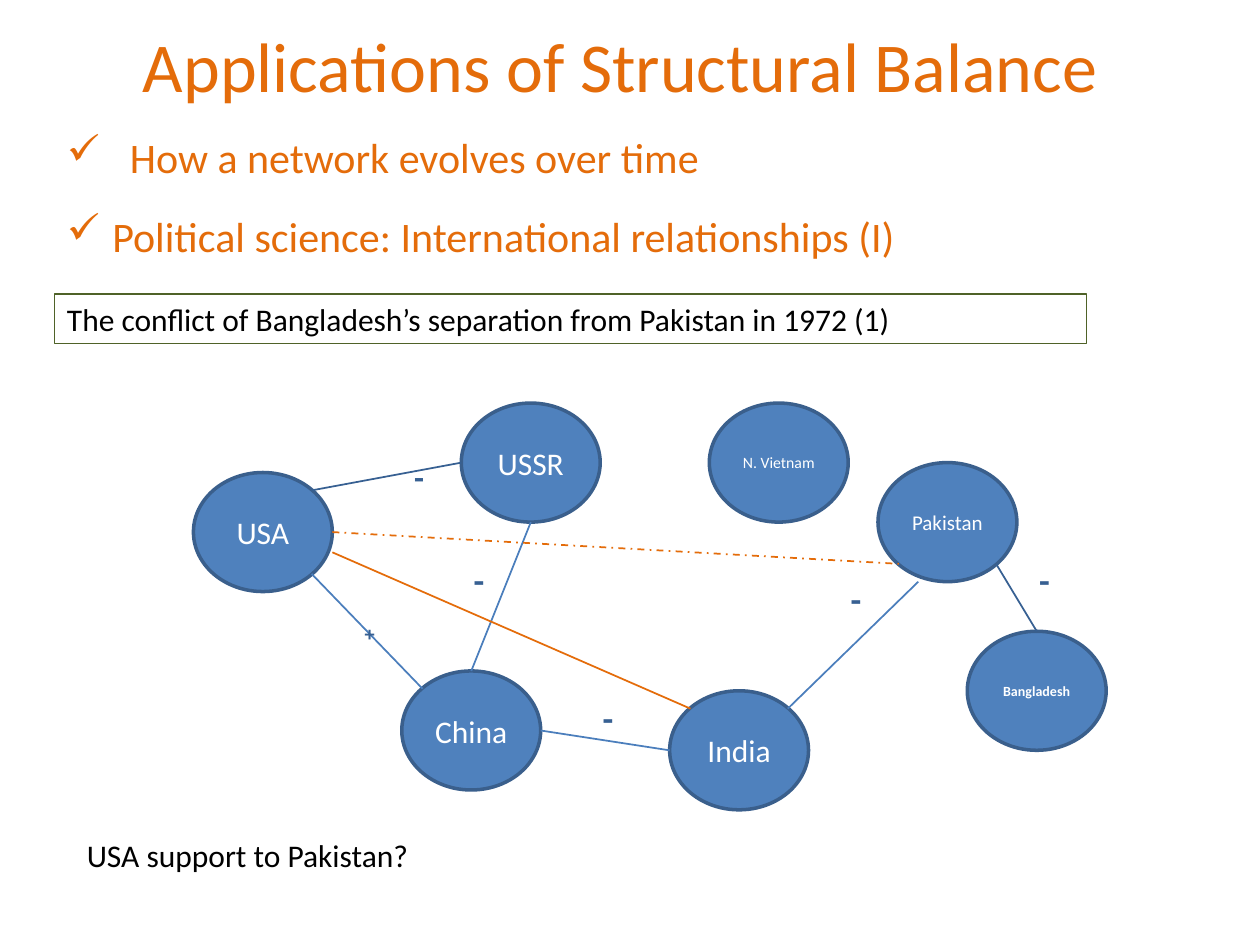
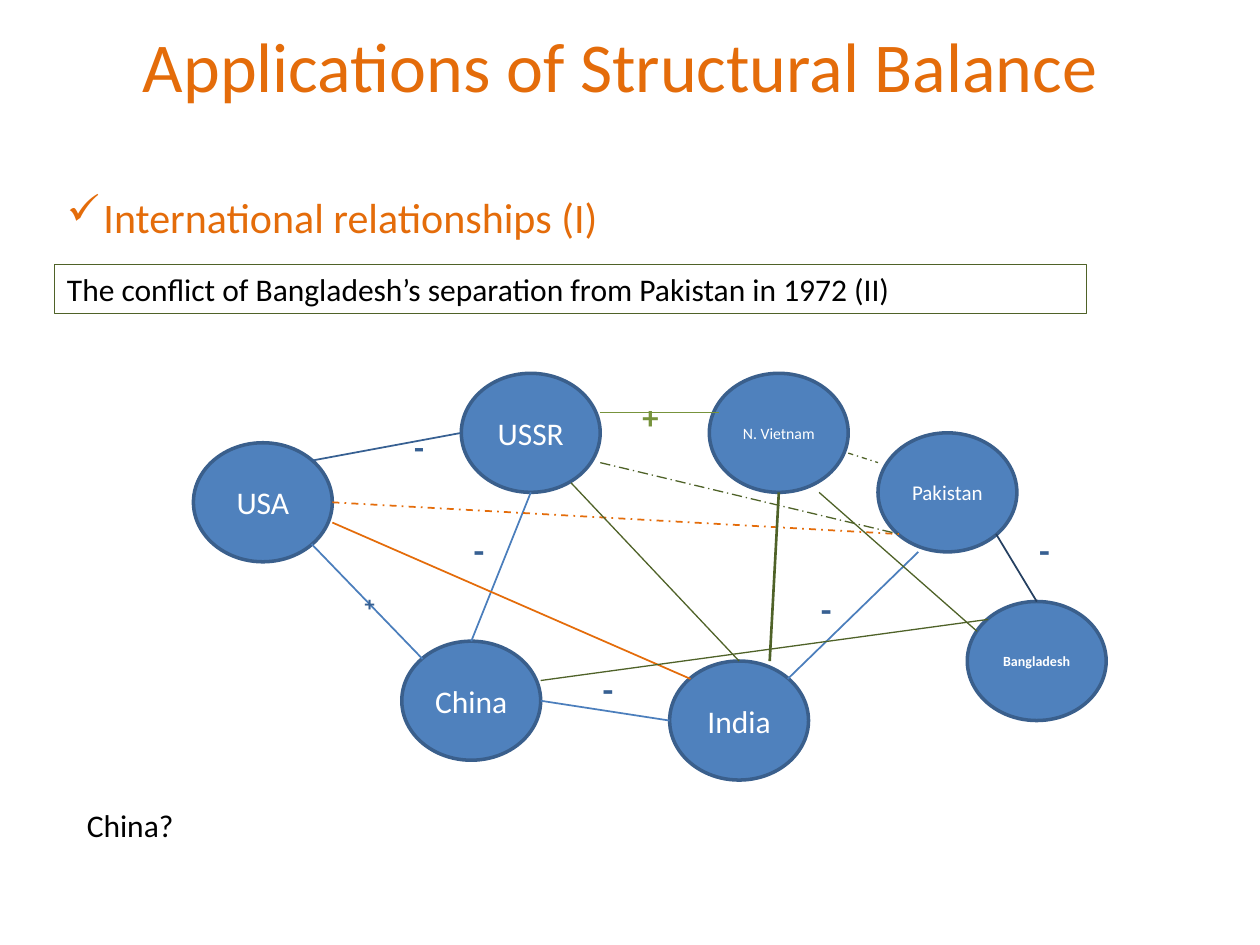
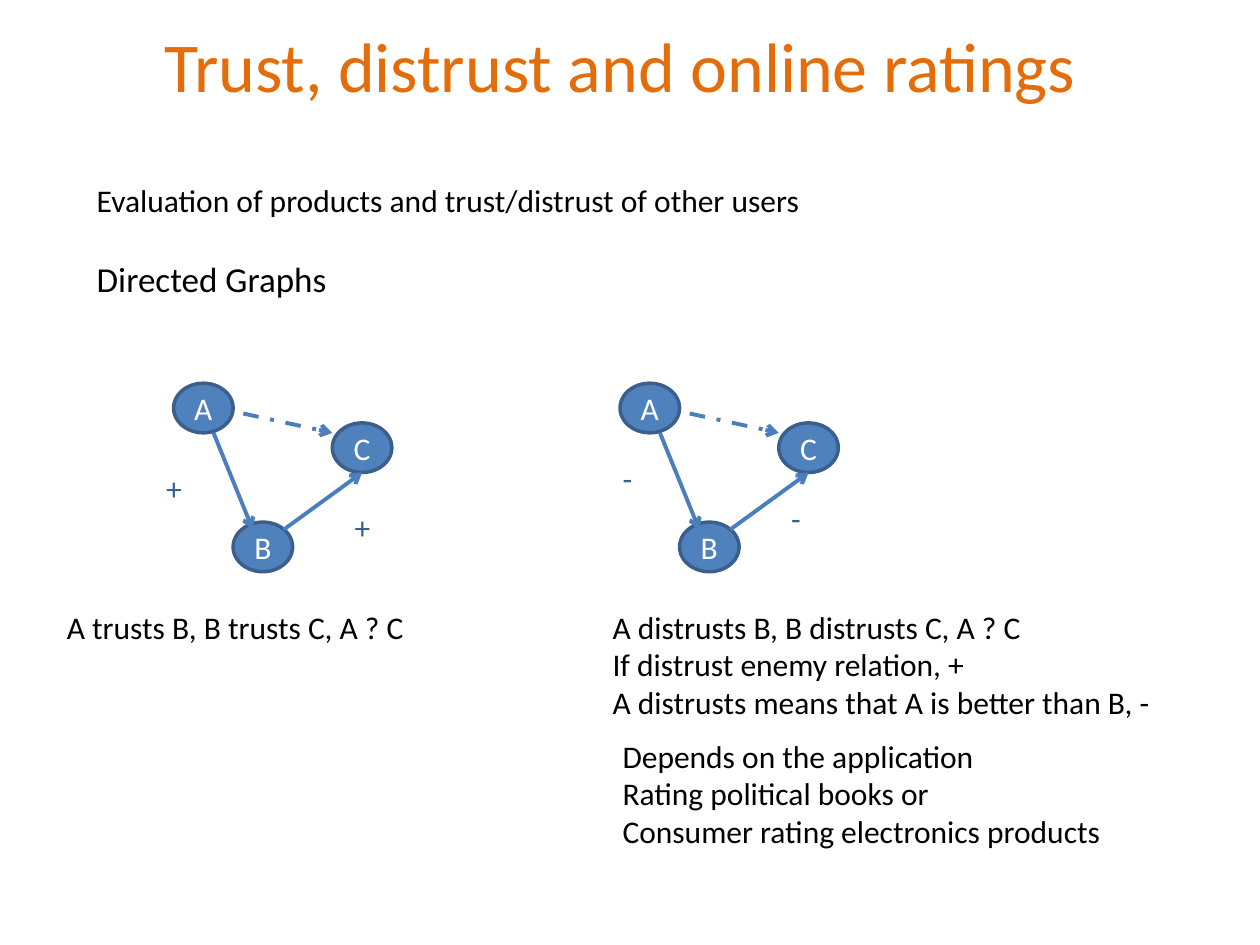
from dataclasses import dataclass, replace

from lxml import etree
from pptx import Presentation
from pptx.dml.color import RGBColor
from pptx.enum.dml import MSO_LINE
from pptx.enum.shapes import MSO_CONNECTOR, MSO_SHAPE
from pptx.enum.text import MSO_ANCHOR, MSO_AUTO_SIZE, PP_ALIGN
from pptx.oxml.ns import qn
from pptx.util import Emu, Inches, Pt

STRAIGHT = MSO_CONNECTOR.STRAIGHT
ELLIPSE = MSO_SHAPE.OVAL
CENTER = PP_ALIGN.CENTER
MIDDLE = MSO_ANCHOR.MIDDLE
GROW = MSO_AUTO_SIZE.SHAPE_TO_FIT_TEXT
FIXED = MSO_AUTO_SIZE.NONE
DASH_DOT = MSO_LINE.DASH_DOT
LONG_DASH_DOT = MSO_LINE.LONG_DASH_DOT

ORANGE = RGBColor(0xE4, 0x6C, 0x0A)
BLACK = RGBColor(0, 0, 0)
WHITE = RGBColor(0xFF, 0xFF, 0xFF)
NODE_FILL = RGBColor(0x4F, 0x81, 0xBD)
NODE_EDGE = RGBColor(0x3A, 0x5F, 0x8C)
BLUE = RGBColor(0x4B, 0x7E, 0xBC)
DARK_BLUE = RGBColor(0x37, 0x60, 0x92)
NAVY = RGBColor(0x25, 0x40, 0x61)
GREEN = RGBColor(0x77, 0x93, 0x3C)
OLIVE = RGBColor(0x4F, 0x62, 0x28)

FONT = "Calibri"
SLIDE_W, SLIDE_H = Inches(10), Inches(7.5)
COLUMNS = 127
CELL = SLIDE_W / COLUMNS
COLUMN_OFFSET, ROW_OFFSET = 0.5, 0.63

Share = tuple[float, float]
TOP, LEFT, BOTTOM, RIGHT = (0.5, 0), (0, 0.5), (0.5, 1), (1, 0.5)
TOP_LEFT, TOP_RIGHT = (0.15, 0.15), (0.85, 0.15)
BOTTOM_LEFT, BOTTOM_RIGHT = (0.15, 0.85), (0.85, 0.85)


@dataclass(frozen=True)
class Area:
    col: float
    row: float
    cols: float
    rows: float

    def moved(self, cols: float = 0, rows: float = 0) -> "Area":
        return replace(self, col=self.col + cols, row=self.row + rows)

    def at(self, share: Share = (0, 0)) -> tuple[Emu, Emu]:
        x = self.col + COLUMN_OFFSET + share[0] * self.cols
        y = self.row + ROW_OFFSET + share[1] * self.rows
        return Emu(round(x * CELL)), Emu(round(y * CELL))

    def box(self) -> tuple[Emu, Emu, Emu, Emu]:
        return *self.at(), Emu(round(self.cols * CELL)), Emu(round(self.rows * CELL))


@dataclass(frozen=True)
class Line:
    text: str
    size: float = 18
    color: RGBColor = BLACK
    bold: bool = False
    lowered: bool = False
    gap: float = 0
    bullet_indent: float = 0


@dataclass(frozen=True)
class Node:
    name: str
    area: Area
    size: float = 18
    bold: bool = False


@dataclass(frozen=True)
class Tie:
    source: str
    leaves: Share
    target: str
    enters: Share
    color: RGBColor = BLUE
    width: float = 1
    dash: MSO_LINE | None = None
    arrow: bool = False


@dataclass(frozen=True)
class Sign:
    line: Line
    area: Area


def country(name: str, col: float, row: float, size: float = 18, bold: bool = False) -> Node:
    return Node(name, Area(col, row, 14, 12), size, bold)


def minus(col: float, row: float) -> Sign:
    return Sign(Line("-", 20, DARK_BLUE, True), Area(col, row, 6, 5.6))


def lowered(symbol: str, size: float, color: RGBColor, area: Area) -> Sign:
    return Sign(Line(symbol, size, color, True, True), area)


TITLE_AREA = Area(7, 1, 110, 9.8)
CONFLICT_AREA = Area(5, 29, 104, 5)
QUESTION_AREA = Area(7, 83, 54, 5)

COUNTRIES = [
    country("USA", 19, 47),
    country("USSR", 46, 40),
    country("China", 40, 67),
    country("India", 67, 69),
    country("Pakistan", 88, 46, 12),
    country("Bangladesh", 97, 63, 8, True),
    country("N. Vietnam", 71, 40, 9),
]
SHARED_TIES = [
    Tie("USSR", BOTTOM, "China", TOP),
    Tie("China", RIGHT, "India", LEFT),
    Tie("USA", BOTTOM_RIGHT, "China", TOP_LEFT),
    Tie("Pakistan", (0.29, 1), "India", TOP_RIGHT),
    Tie("USA", (1, 0.67), "India", TOP_LEFT, ORANGE),
    Tie("USA", RIGHT, "Pakistan", BOTTOM_LEFT, ORANGE, dash=DASH_DOT),
    Tie("USA", TOP_RIGHT, "USSR", LEFT, DARK_BLUE),
]
SEPARATION = Tie("Pakistan", BOTTOM_RIGHT, "Bangladesh", TOP, DARK_BLUE)
LATER_TIES = [
    replace(SEPARATION, color=NAVY),
    Tie("USSR", (1, 0.33), "N. Vietnam", (0.07, 0.33), GREEN),
    Tie("USSR", (0.79, 0.92), "India", TOP, OLIVE, 0.75),
    Tie("N. Vietnam", BOTTOM, "India", (0.72, 0), OLIVE, 1.5),
    Tie("N. Vietnam", (1, 0.67), "Pakistan", (0, 0.25), OLIVE, 0.75, DASH_DOT),
    Tie("N. Vietnam", (0.79, 1), "Bangladesh", (0.07, 0.25), OLIVE, 0.75),
    Tie("USSR", (1, 0.75), "Pakistan", BOTTOM_LEFT, OLIVE, 0.75, LONG_DASH_DOT),
    Tie("China", (1, 0.33), "Bangladesh", TOP_LEFT, OLIVE, 0.75),
]
SHARED_SIGNS = [
    minus(46, 55),
    minus(59, 69),
    minus(103, 55),
    lowered("+", 20, DARK_BLUE, Area(35, 59, 6, 4.2)),
    lowered("-", 32, DARK_BLUE, Area(40, 41, 6, 5.8)),
]

USERS = [
    Node("A", Area(17, 38, 6, 5)),
    Node("C", Area(33, 42, 6, 5)),
    Node("B", Area(23, 52, 6, 5)),
]
TRUST_TIES = [
    Tie("A", (0.67, 1), "B", (0.33, 0.15), width=2.25, arrow=True),
    Tie("B", TOP_RIGHT, "C", BOTTOM, width=2.25, arrow=True),
    Tie("A", (1.17, 0.61), "C", (0, 0.2), width=2.25, dash=DASH_DOT, arrow=True),
]


def write(frame, lines: list[Line], align: PP_ALIGN | None = None) -> None:
    frame.word_wrap = True
    for index, line in enumerate(lines):
        paragraph = frame.paragraphs[0] if index == 0 else frame.add_paragraph()
        if align is not None:
            paragraph.alignment = align
        if line.gap:
            paragraph.space_before = Pt(line.gap)
        if line.bullet_indent:
            indent = Inches(line.bullet_indent)
            properties = paragraph._p.get_or_add_pPr()
            properties.set("marL", str(indent))
            properties.set("indent", str(-indent))
            etree.SubElement(properties, qn("a:buChar")).set("char", "✓")
        run = paragraph.add_run()
        run.text = line.text
        run.font.name = FONT
        run.font.size = Pt(line.size)
        run.font.bold = line.bold
        run.font.color.rgb = line.color
        if line.lowered:
            run._r.get_or_add_rPr().set("baseline", "-25000")


def add_text(slide, area: Area, *lines: Line):
    text = slide.shapes.add_textbox(*area.box())
    write(text.text_frame, list(lines))
    text.text_frame.auto_size = GROW
    return text


def add_titled_slide(deck, heading: str):
    slide = deck.slides.add_slide(deck.slide_layouts[5])
    title = slide.shapes.title
    title.left, title.top, title.width, title.height = TITLE_AREA.box()
    title.text_frame.auto_size = FIXED
    write(title.text_frame, [Line(heading, 40, ORANGE)], CENTER)
    return slide


def add_node(slide, node: Node) -> None:
    oval = slide.shapes.add_shape(ELLIPSE, *node.area.box())
    oval.shadow.inherit = False
    oval.fill.solid()
    oval.fill.fore_color.rgb = NODE_FILL
    oval.line.color.rgb = NODE_EDGE
    oval.line.width = Pt(2)
    frame = oval.text_frame
    frame.margin_left = frame.margin_right = 0
    frame.margin_top = frame.margin_bottom = 0
    frame.vertical_anchor = MIDDLE
    write(frame, [Line(node.name, node.size, WHITE, node.bold)], CENTER)


def add_tie(slide, tie: Tie, areas: dict[str, Area]) -> None:
    start = areas[tie.source].at(tie.leaves)
    end = areas[tie.target].at(tie.enters)
    link = slide.shapes.add_connector(STRAIGHT, *start, *end)
    link.line.color.rgb = tie.color
    link.line.width = Pt(tie.width)
    if tie.dash is not None:
        link.line.dash_style = tie.dash
    if tie.arrow:
        etree.SubElement(link.line._get_or_add_ln(), qn("a:tailEnd")).set("type", "arrow")
    etree.SubElement(link._element.spPr, qn("a:effectLst"))


def add_graph(slide, nodes: list[Node], ties: list[Tie], signs: list[Sign],
              cols: float = 0, rows: float = 0) -> None:
    placed = [replace(node, area=node.area.moved(cols, rows)) for node in nodes]
    areas = {node.name: node.area for node in placed}
    for node in placed:
        add_node(slide, node)
    for tie in ties:
        add_tie(slide, tie, areas)
    for sign in signs:
        add_text(slide, sign.area.moved(cols, rows), sign.line)


def add_conflict_slide(deck, part: str, question: str, ties: list[Tie],
                       signs: list[Sign], rows: float = 0):
    slide = add_titled_slide(deck, "Applications of Structural Balance")
    conflict = add_text(
        slide, CONFLICT_AREA.moved(rows=rows),
        Line(f"The conflict of Bangladesh’s separation from Pakistan in 1972 ({part})"))
    conflict.line.color.rgb = OLIVE
    conflict.line.width = Pt(0.75)
    add_graph(slide, COUNTRIES, SHARED_TIES + ties, SHARED_SIGNS + signs, rows=rows)
    add_text(slide, QUESTION_AREA.moved(rows=rows), Line(question))
    return slide


def add_topic(slide, text: str, area: Area, indent: float) -> None:
    add_text(slide, area, Line(text, 24, ORANGE, bullet_indent=indent))


def add_trust_slide(deck) -> None:
    slide = add_titled_slide(deck, "Trust, distrust and online ratings")
    add_text(slide, Area(8, 17, 84, 13.2),
             Line("Evaluation of products and trust/distrust of other users"),
             Line("Directed Graphs", 20, gap=22))
    for symbol, cols, rows in (("+", 0, 0), ("-", 45, -1)):
        add_graph(slide, USERS, TRUST_TIES, [], cols)
        for col, row in ((15, 46), (34, 50)):
            nudge = cols + 2 * (symbol == "-" and col == 15) - (symbol == "-")
            add_text(slide, Area(col, row, 4, 5).moved(nudge, rows),
                     Line(symbol, color=DARK_BLUE))
    add_text(slide, Area(5, 60, 43, 5), Line("A trusts B, B trusts C, A ? C"))
    add_text(slide, Area(60, 60, 58, 12.8),
             Line("A distrusts B, B distrusts C, A ? C"),
             Line("If distrust enemy relation, +"),
             Line("A distrusts means that A is better than B, -"))
    add_text(slide, Area(61, 73, 62, 12.8),
             Line("Depends on the application"),
             Line("Rating political books or"),
             Line("Consumer rating electronics products"))


def main() -> None:
    deck = Presentation()
    deck.slide_width, deck.slide_height = SLIDE_W, SLIDE_H

    first = add_conflict_slide(deck, "1", "USA support to Pakistan?",
                               [SEPARATION], [minus(84, 57)])
    add_topic(first, "How a network evolves over time", Area(5, 12, 98, 6.3), 0.5)
    add_topic(first, "Political science: International relationships (I)",
              Area(5, 20, 102, 6.3), 0.36)

    friendly = lowered("+", 32, GREEN, Area(63, 38, 6, 5.8))
    second = add_conflict_slide(deck, "II", "China?", LATER_TIES,
                                [minus(81, 61), friendly], rows=-3)
    add_topic(second, "International relationships (I)", Area(5, 18, 86, 6.3), 0.29)

    add_trust_slide(deck)
    deck.save("out.pptx")


if __name__ == "__main__":
    main()
